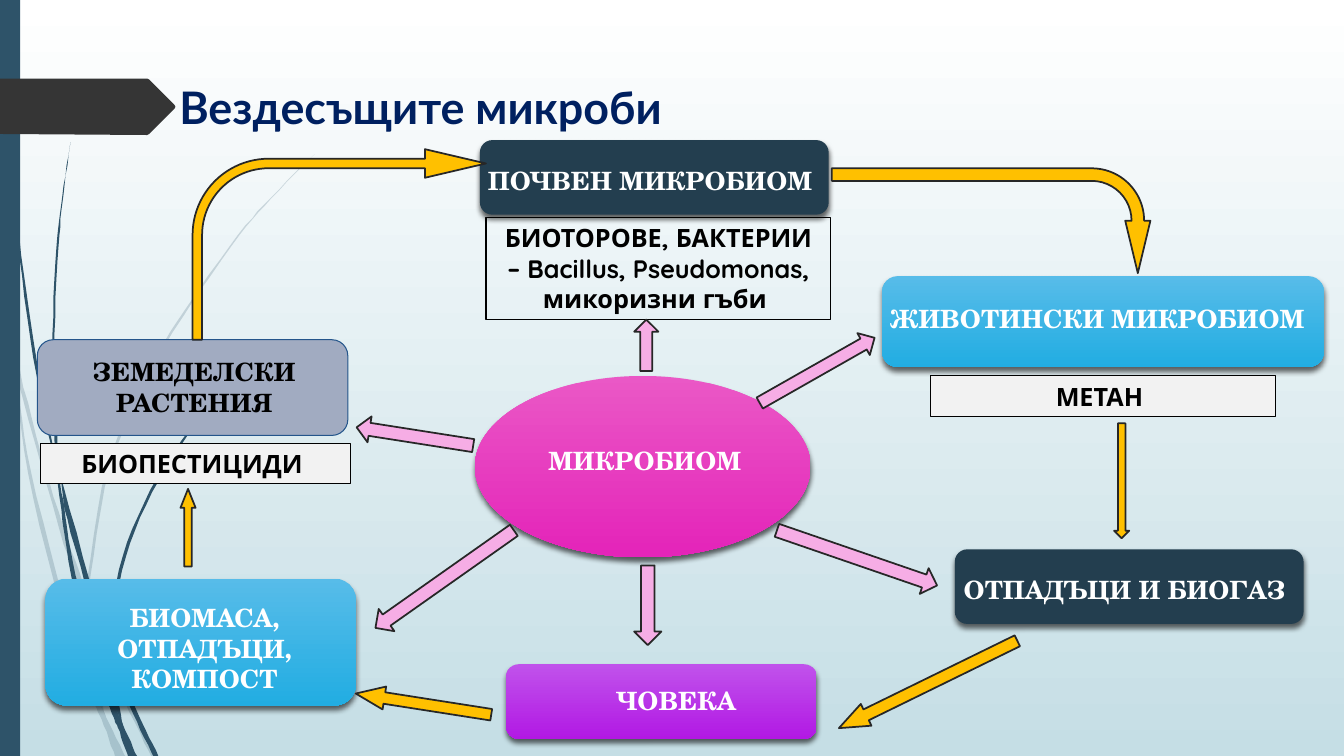
from lxml import etree
from pptx import Presentation, util as u
from pptx.dml.color import RGBColor
from pptx.enum import shapes, text
from pptx.oxml import ns

PX = 9144  # 100 px to the inch
KIND = shapes.MSO_SHAPE
CENTER, LEFT = text.PP_ALIGN.CENTER, text.PP_ALIGN.LEFT

WHITE = RGBColor(0xFF, 0xFF, 0xFF)
BLACK = RGBColor(0x00, 0x00, 0x00)
MIST = RGBColor(0xC5, 0xDE, 0xE5)
STEEL = RGBColor(0x2E, 0x53, 0x69)
CHARCOAL = RGBColor(0x35, 0x35, 0x35)
NAVY = RGBColor(0x00, 0x20, 0x60)
SLATE = RGBColor(0x23, 0x3E, 0x4F)
LAVENDER = RGBColor(0xA1, 0xAB, 0xC1)
BLUE_EDGE = RGBColor(0x24, 0x55, 0x8B)
PALE = RGBColor(0xF2, 0xF2, 0xF2)
PINK = RGBColor(0xF6, 0xAD, 0xE5)
GOLD = RGBColor(0xFF, 0xC0, 0x00)
ARROW_EDGE = RGBColor(0x27, 0x27, 0x27)
MAGENTAS = (RGBColor(0xEA, 0x58, 0xC6), RGBColor(0xE4, 0x24, 0xB9))
PURPLES = (RGBColor(0xC0, 0x52, 0xEB), RGBColor(0xB2, 0x19, 0xE4))
BLUES = (RGBColor(0x57, 0xBC, 0xE9), RGBColor(0x22, 0xAD, 0xE2))

deck = Presentation()
deck.slide_width, deck.slide_height = 1333 * PX, 750 * PX
page = deck.slides.add_slide(deck.slide_layouts[6])


def paint(shape, fill=None, edge=None, weight=0.75):
    """Fill with nothing, one colour or a downward gradient; outline if asked."""
    shape.shadow.inherit = False
    if fill is None:
        shape.fill.background()
    elif isinstance(fill, RGBColor):
        shape.fill.solid()
        shape.fill.fore_color.rgb = fill
    else:
        shape.fill.gradient()
        shape.fill.gradient_angle = 270
        for stop, color in zip(shape.fill.gradient_stops, fill):
            stop.color.rgb = color
    if edge is None:
        shape.line.fill.background()
    else:
        shape.line.color.rgb = edge
        shape.line.width = u.Pt(weight)


def write(box, words, font, color, size=18, align=CENTER):
    frame = box.text_frame
    frame.word_wrap = True
    frame.vertical_anchor = text.MSO_ANCHOR.TOP
    frame.text = words
    para = frame.paragraphs[0]
    para.alignment = align
    span = para.runs[0]
    span.font.name, span.font.size = font, u.Pt(size)
    span.font.bold, span.font.color.rgb = True, color


# Background
backdrop = page.background.fill
backdrop.gradient()
backdrop.gradient_angle = 270
for stop, color in zip(backdrop.gradient_stops, (WHITE, MIST)):
    stop.color.rgb = color

# Grass blades: opacity in percent, then the two sides of each blade
blades = [
    (20, [(14, 345), (36, 433), (62, 520), (85, 586), (92, 607), (127, 692), (155, 750)],
     [(150, 750), (123, 694), (88, 610), (84, 599), (58, 522), (17, 376)]),
    (20, [(0, 282), (9, 322), (17, 376), (31, 469), (70, 619), (93, 683), (105, 711), (124, 750)],
     [(114, 750), (101, 714), (92, 693), (65, 621), (28, 470), (11, 350), (0, 299)]),
    (20, [(84, 599), (87, 646), (93, 683), (105, 711)], [(103, 706), (91, 646), (88, 610)]),
    (20, [(85, 586), (107, 461), (158, 348), (228, 244), (268, 197), (312, 153)],
     [(312, 153), (268, 198), (229, 245), (160, 349), (110, 462), (88, 584), (88, 596)]),
    (100, [(4, 0), (5, 48), (8, 109), (19, 232), (36, 355), (55, 453), (64, 505), (72, 556),
           (98, 657), (110, 691), (122, 719), (136, 750)],
     [(127, 750), (117, 722), (111, 708), (93, 659), (68, 557), (57, 477), (33, 355),
      (17, 233), (7, 110), (4, 48), (3, 0)]),
    (100, [(60, 472), (93, 590), (106, 631), (113, 649), (136, 706), (157, 750)],
     [(152, 750), (132, 708), (111, 656), (106, 645), (88, 592), (64, 505)]),
    (100, [(70, 141), (62, 193), (56, 245), (52, 349), (55, 449), (60, 472)],
     [(60, 472), (58, 453), (54, 349), (58, 245), (63, 193), (70, 141)]),
    (100, [(106, 631), (122, 551), (156, 474), (204, 405), (231, 373), (261, 344)],
     [(261, 344), (231, 374), (205, 406), (158, 476), (125, 552), (111, 633), (110, 641)]),
    (100, [(106, 645), (110, 691), (116, 706), (122, 719)], [(121, 716), (111, 656)]),
]
STEPS = 6
for opacity, *sides in blades:
    outline = []
    for side in sides:  # Catmull-Rom curve through the points of the side
        knots = [side[0], *side, side[-1]]
        for a, b, c, d in zip(knots, knots[1:], knots[2:], knots[3:]):
            for t in (step / STEPS for step in range(STEPS)):
                outline.append([
                    (2 * q + (r - p) * t + (2 * p - 5 * q + 4 * r - s) * t ** 2
                     + (3 * q - p - 3 * r + s) * t ** 3) / 2
                    for p, q, r, s in zip(a, b, c, d)])
        outline.append(side[-1])
    pen = page.shapes.build_freeform(*outline[0], scale=PX)
    pen.add_line_segments(outline[1:])
    blade = pen.convert_to_shape()
    paint(blade, STEEL)
    if opacity < 100:
        tint = blade.fill._xPr.find(".//" + ns.qn("a:srgbClr"))
        etree.SubElement(tint, ns.qn("a:alpha"), val=str(opacity * 1000))

# Side bar and title tag
bar = page.shapes.add_shape(KIND.RECTANGLE, 0, 0, 20 * PX, 750 * PX)
paint(bar, STEEL)
pen = page.shapes.build_freeform(0, 78, scale=PX)
pen.add_line_segments([(146, 78), (148, 79), (173, 104), (174, 106), (173, 108),
                       (148, 133), (146, 134), (0, 133)])
paint(pen.convert_to_shape(), CHARCOAL)

# Nodes: shape, its place, fill, label, label's place, colour and alignment
ROUND = KIND.ROUNDED_RECTANGLE
nodes = [
    (KIND.OVAL, (471, 373, 333, 180), MAGENTAS, "МИКРОБИОМ", (473, 437, 333, 71), WHITE, CENTER),
    (ROUND, (502, 659, 308, 74), PURPLES, "ЧОВЕКА", (502, 675, 337, 40), WHITE, CENTER),
    (ROUND, (45, 574, 308, 126), BLUES, "БИОМАСА, ОТПАДЪЦИ, КОМПОСТ",
     (45, 593, 316, 101), WHITE, CENTER),
    (ROUND, (37, 337, 308, 95), LAVENDER, "ЗЕМЕДЕЛСКИ РАСТЕНИЯ",
     (81, 349, 223, 71), BLACK, CENTER),
    (ROUND, (875, 274, 438, 90), BLUES, "ЖИВОТИНСКИ МИКРОБИОМ",
     (873, 296, 440, 87), WHITE, LEFT),
    (ROUND, (947, 545, 346, 74), SLATE, "ОТПАДЪЦИ И БИОГАЗ", (946, 565, 348, 40), WHITE, LEFT),
    (ROUND, (476, 139, 346, 74), SLATE, "ПОЧВЕН МИКРОБИОМ", (474, 159, 348, 40), WHITE, LEFT),
]
for kind, place, fill, words, label_place, color, align in nodes:
    node = page.shapes.add_shape(kind, *(n * PX for n in place))
    if fill == LAVENDER:
        paint(node, fill, BLUE_EDGE)
    else:
        paint(node, fill)
        effects = node._element.spPr.find(ns.qn("a:effectLst"))
        shade = etree.SubElement(effects, ns.qn("a:outerShdw"), blurRad=str(u.Pt(4)),
                                 dist=str(u.Pt(3)), dir="5400000", rotWithShape="0")
        tone = etree.SubElement(shade, ns.qn("a:srgbClr"), val="000000")
        etree.SubElement(tone, ns.qn("a:alpha"), val="60000")
    label = page.shapes.add_textbox(*(n * PX for n in label_place))
    write(label, words, "TeX Gyre Schola", color, align=align)

# Product boxes
for place, fill, words in [
    ((482, 216, 342, 101), None, "БИОТОРОВЕ, БАКТЕРИИ – Bacillus, Pseudomonas, микоризни гъби "),
    ((923, 373, 342, 40), PALE, "МЕТАН "),
    ((40, 440, 308, 40), PALE, "БИОПЕСТИЦИДИ "),
]:
    box = page.shapes.add_shape(KIND.RECTANGLE, *(n * PX for n in place))
    paint(box, fill, BLACK)
    write(box, words, "Quicksand", BLACK)

# Arrows: shape, place, turn in degrees, fill, adjustments
RIGHT, BENT = KIND.RIGHT_ARROW, KIND.BENT_ARROW
LONG_HEAD = (0.5, 1.25)
for kind, place, turn, fill, adjustments in [
    (KIND.UP_ARROW, (629, 317, 24, 51), 0, PINK, ()),
    (RIGHT, (745, 355, 131, 25), 330.4, PINK, ()),
    (RIGHT, (766, 540, 168, 27), 19, PINK, ()),
    (RIGHT, (357, 561, 168, 27), 144.8, PINK, ()),
    (RIGHT, (353, 420, 117, 26), 188.9, PINK, ()),
    (RIGHT, (603, 587, 79, 27), 90, PINK, ()),
    (BENT, (191, 148, 291, 189), 0, GOLD, (0.05, 0.075, 0.32, 0.4)),
    (BENT, (931, 61, 104, 316), 90, GOLD, (0.12, 0.12, 0.5, 0.5)),
    (KIND.DOWN_ARROW, (1105, 420, 15, 114), 0, GOLD, ()),
    (RIGHT, (822, 667, 197, 24), 153.9, GOLD, LONG_HEAD),
    (RIGHT, (352, 687, 136, 23), 188.9, GOLD, LONG_HEAD),
    (RIGHT, (148, 516, 77, 15), 270, GOLD, LONG_HEAD),
]:
    arrow = page.shapes.add_shape(kind, *(n * PX for n in place))
    arrow.rotation = turn
    for index, value in enumerate(adjustments):
        arrow.adjustments[index] = value
    paint(arrow, fill, ARROW_EDGE, 1.25)

# Title
title = page.shapes.add_textbox(168 * PX, 74 * PX, 549 * PX, 64 * PX)
write(title, "Вездесъщите микроби", "Lato", NAVY, 32, LEFT)

deck.save("out.pptx")
